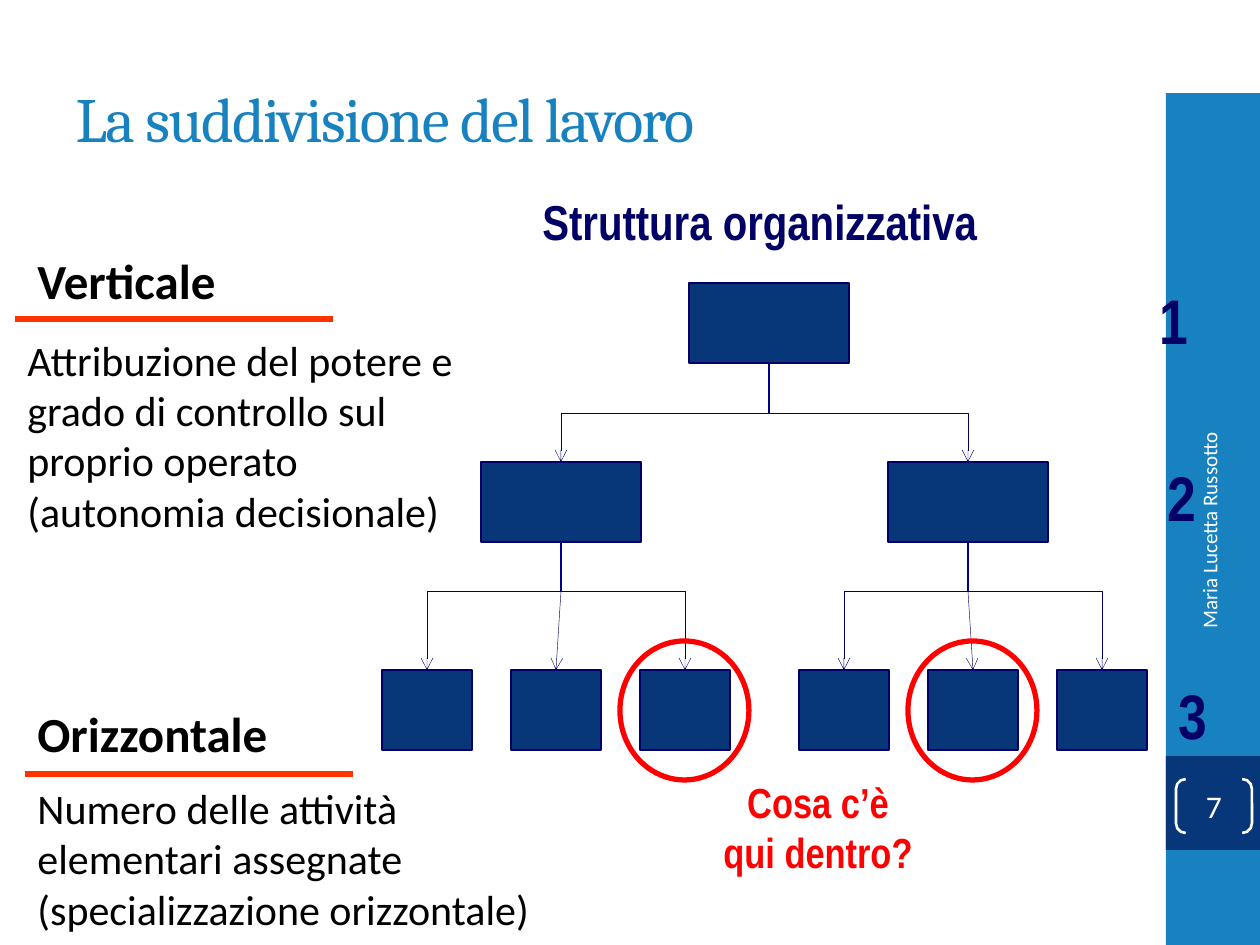
from dataclasses import dataclass

from lxml import etree
from pptx import Presentation
from pptx import util as u
from pptx.dml.color import RGBColor
from pptx.enum import shapes, text
from pptx.oxml import ns

SHAPE = shapes.MSO_SHAPE
ALIGN = text.PP_ALIGN
ANCHOR = text.MSO_ANCHOR


@dataclass(frozen=True)
class Theme:
    sky: str = "1782BF"
    deep: str = "073779"
    navy: str = "000066"
    trunk: str = "000090"
    rule: str = "FF3300"
    alert: str = "FF0000"
    ink: str = "000000"
    paper: str = "FFFFFF"
    heading: str = "Cambria"
    body: str = "Calibri"
    label: str = "Arial Narrow"
    title_size: int = 36
    head_size: int = 28
    text_size: int = 24
    page_size: int = 18
    small_size: int = 12


def px(length):
    return u.Emu(round(length * 914400 / 126))


def write(frame, content, size, color, font, bold=False, align=ALIGN.LEFT,
          anchor=ANCHOR.TOP, spacing=None):
    frame.word_wrap = True
    frame.auto_size = text.MSO_AUTO_SIZE.NONE
    frame.vertical_anchor = anchor
    frame.text = content
    for paragraph in frame.paragraphs:
        paragraph.alignment = align
        for run in paragraph.runs:
            run.font.size = u.Pt(size)
            run.font.name = font
            run.font.bold = bold
            run.font.color.rgb = RGBColor.from_string(color)
            if spacing is not None:
                run.font._element.set("spc", str(spacing))


class Composer:
    def __init__(self, slide, theme):
        self.slide = slide
        self.theme = theme

    def title(self, content, x, y, w, h):
        heading = self.slide.shapes.title
        heading.left, heading.top, heading.width, heading.height = map(px, (x, y, w, h))
        write(heading.text_frame, content, self.theme.title_size, self.theme.sky,
              self.theme.heading, anchor=ANCHOR.MIDDLE, spacing=-100)

    def text(self, content, x, y, w, h, rotation=0, **style):
        box = self.slide.shapes.add_textbox(*map(px, (x, y, w, h)))
        box.rotation = rotation
        write(box.text_frame, content, **style)

    def shape(self, kind, x, y, w, h, fill=None, line=None, width=1):
        figure = self.slide.shapes.add_shape(kind, *map(px, (x, y, w, h)))
        figure.shadow.inherit = False
        if fill:
            figure.fill.solid()
            figure.fill.fore_color.rgb = RGBColor.from_string(fill)
        else:
            figure.fill.background()
        if line:
            figure.line.color.rgb = RGBColor.from_string(line)
            figure.line.width = u.Pt(width)
        else:
            figure.line.fill.background()
        return figure

    def unit(self, x, y, w, h):
        return self.shape(SHAPE.RECTANGLE, x, y, w, h, self.theme.deep, self.theme.navy)

    def line(self, start, end, color, width, arrow=False, bent=False):
        kind = shapes.MSO_CONNECTOR.ELBOW if bent else shapes.MSO_CONNECTOR.STRAIGHT
        link = self.slide.shapes.add_connector(kind, *map(px, (*start, *end)))
        link.line.color.rgb = RGBColor.from_string(color)
        link.line.width = u.Pt(width)
        properties = link._element.spPr
        if bent:
            properties.find(ns.qn("a:prstGeom")).set("prst", "bentConnector2")
        if arrow:
            etree.SubElement(link.line._get_or_add_ln(), ns.qn("a:tailEnd"), type="arrow")
        etree.SubElement(properties, ns.qn("a:effectLst"))
        return link

    def trunk(self, parent, start, end):
        self.line(start, end, self.theme.trunk, 0.75).begin_connect(parent, 2)

    def branch(self, start, end, bent=True):
        return self.line(start, end, self.theme.navy, 0.25, arrow=True, bent=bent)


def draw_chart(page):
    unit_w, unit_h, leaf_w, leaf_step = 160, 80, 90, 129
    director_x, director_y, manager_y, leaf_y = 689, 283, 462, 670
    director_fork = (director_x + unit_w // 2, 413)
    director = page.unit(director_x, director_y, unit_w, unit_h)
    page.trunk(director, (director_fork[0], director_y + unit_h), director_fork)

    for manager_x, first_leaf_x, circled in ((481, 382, 2), (888, 799, 1)):
        center = manager_x + unit_w // 2
        fork = (center, 591)
        manager = page.unit(manager_x, manager_y, unit_w, unit_h)
        page.branch(director_fork, (center, manager_y))
        page.trunk(manager, (center, manager_y + unit_h), fork)
        for index in range(3):
            leaf_x = first_leaf_x + index * leaf_step
            leaf = page.unit(leaf_x, leaf_y, leaf_w, unit_h)
            middle = index == 1
            arrow = page.branch(fork, (leaf_x + leaf_w // 2, leaf_y), bent=not middle)
            if middle:
                arrow.end_connect(leaf, 0)
            if index == circled:
                page.shape(SHAPE.OVAL, leaf_x - 20, leaf_y - 29, 129, 139,
                           line=page.theme.alert, width=3)


def main():
    theme = Theme()
    deck = Presentation()
    deck.slide_width, deck.slide_height = px(1260), px(945)
    page = Composer(deck.slides.add_slide(deck.slide_layouts[5]), theme)

    page.shape(SHAPE.RECTANGLE, 1166, 93, 94, 852, theme.sky)
    page.shape(SHAPE.RECTANGLE, 1166, 756, 94, 94, theme.deep)
    page.title("La suddivisione del lavoro", 63, 38, 1050, 158)

    head = dict(size=theme.head_size, color=theme.ink, font=theme.body, bold=True,
                anchor=ANCHOR.BOTTOM)
    detail = dict(size=theme.text_size, color=theme.ink, font=theme.body,
                  anchor=ANCHOR.BOTTOM)
    page.text("Orizzontale", 25, 697, 260, 72, **head)
    page.text("Verticale", 25, 244, 208, 72, **head)
    page.text("Attribuzione del potere e grado di controllo sul proprio operato "
              "(autonomia decisionale)", 15, 325, 451, 217, **detail)
    page.text("Numero delle attività\nelementari assegnate (specializzazione orizzontale)",
              25, 775, 576, 165, **detail)
    page.line((15, 319), (333, 319), theme.rule, 3)
    page.line((25, 774), (353, 774), theme.rule, 3)

    draw_chart(page)

    label = dict(font=theme.label, bold=True)
    page.text("Cosa c’è qui dentro?", 709, 770, 218, 115, size=theme.text_size,
              color=theme.alert, align=ALIGN.CENTER, **label)
    for level, x, y in (("1", 1147, 275), ("2", 1155, 452), ("3", 1166, 670)):
        page.text(level, x, y, 79, 89, size=theme.title_size, color=theme.navy, **label)
    page.text("Struttura organizzativa", 530, 185, 476, 72, size=theme.head_size,
              color=theme.navy, **label)

    page.text("Maria Lucetta Russotto", 1046, 558, 326, 50, rotation=270,
              size=theme.small_size, color=theme.paper, font=theme.body,
              align=ALIGN.RIGHT, anchor=ANCHOR.MIDDLE)
    bracket = page.shape(SHAPE.DOUBLE_BRACKET, 1176, 779, 76, 54,
                         line=theme.paper, width=1.5)
    bracket.adjustments[0] = 0.18
    frame = bracket.text_frame
    frame.margin_left = frame.margin_right = frame.margin_top = frame.margin_bottom = 0
    write(frame, "7", theme.page_size, theme.paper, theme.body,
          align=ALIGN.CENTER, anchor=ANCHOR.MIDDLE)

    deck.save("out.pptx")


if __name__ == "__main__":
    main()
